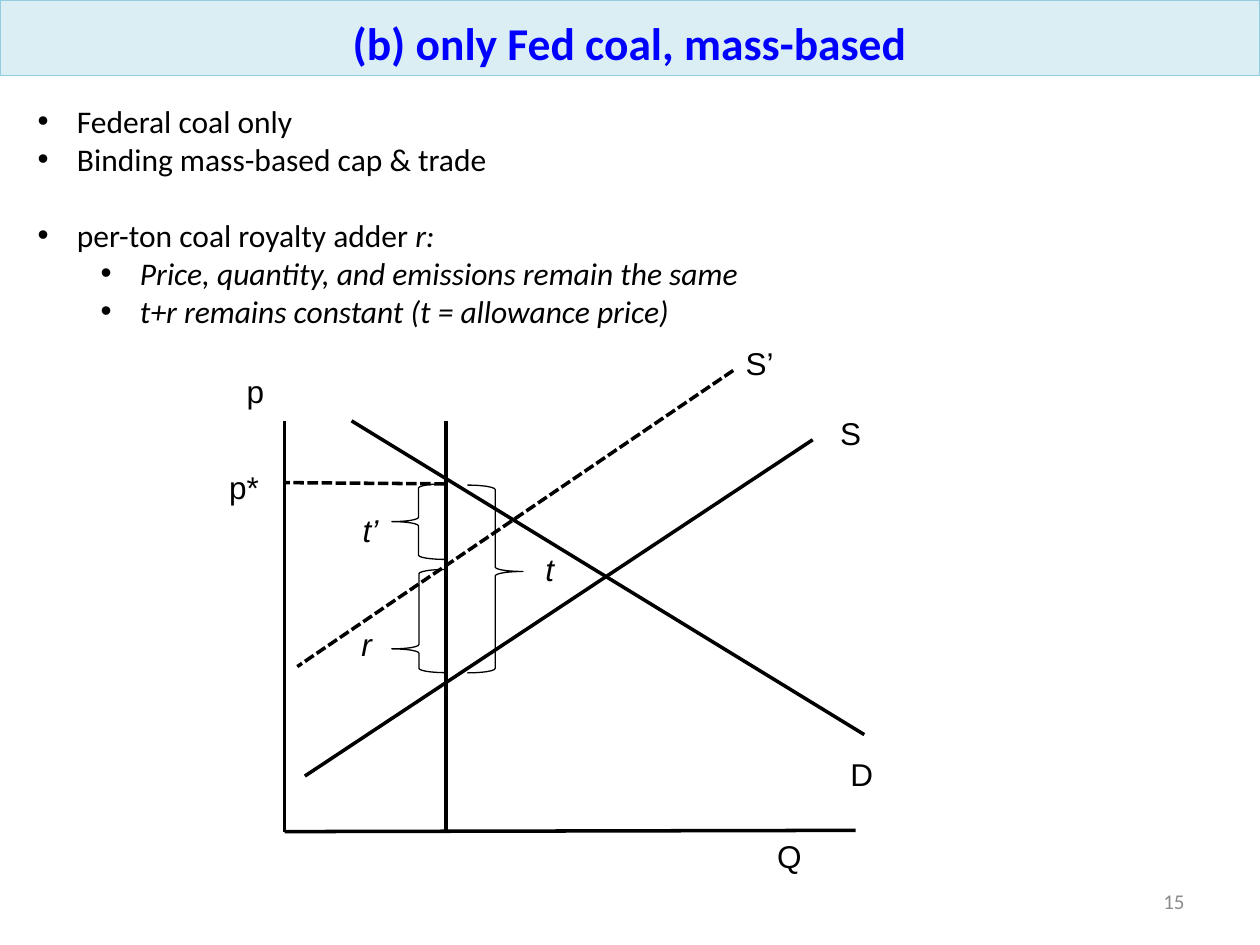
from lxml.etree import SubElement
from pptx import Presentation
from pptx.dml.color import RGBColor
from pptx.enum.dml import MSO_LINE
from pptx.enum.shapes import MSO_CONNECTOR, MSO_SHAPE
from pptx.enum.text import MSO_ANCHOR, MSO_AUTO_SIZE, PP_ALIGN
from pptx.oxml.ns import qn
from pptx.util import Pt

COLORS = {"band": "DBEEF4", "band_edge": "93CDDD", "title": "0000FF",
          "ink": "000000", "page_number": "8C8C8C"}
AXIS_X, CAP_X, TOP_Y, BASE_Y = 162.7, 254.9, 240.5, 475.2


def color(name):
    """Look up a palette colour."""
    return RGBColor.from_string(COLORS[name])


def style_span(span, size, font, ink="ink", bold=False, italic=False):
    """Format one run of text."""
    span.font.size = Pt(size)
    span.font.name = font
    span.font.color.rgb = color(ink)
    span.font.bold = bold
    span.font.italic = italic


def place(shape, left, top, width, height):
    """Move and size a shape."""
    shape.left, shape.top = Pt(left), Pt(top)
    shape.width, shape.height = Pt(width), Pt(height)


def set_title(page, text):
    """Turn the title placeholder into a coloured band across the top."""
    title = page.shapes.title
    place(title, 0, 0, 720, 43.2)
    title.fill.solid()
    title.fill.fore_color.rgb = color("band")
    title.line.color.rgb = color("band_edge")
    title.line.width = Pt(0)
    frame = title.text_frame
    frame.text = text
    frame.auto_size = MSO_AUTO_SIZE.NONE
    frame.vertical_anchor = MSO_ANCHOR.BOTTOM
    para = frame.paragraphs[0]
    para.alignment = PP_ALIGN.CENTER
    style_span(para.runs[0], 26, "Calibri", "title", bold=True)


def add_bullets(page, bounds, items):
    """Add bulleted paragraphs from (level, space before, spans) items."""
    box = page.shapes.add_textbox(*map(Pt, bounds))
    frame = box.text_frame
    frame.word_wrap = True
    for index, (level, gap, spans) in enumerate(items):
        para = frame.add_paragraph() if index else frame.paragraphs[0]
        para.level = level
        para.space_before = Pt(gap)
        properties = para._p.get_or_add_pPr()
        properties.set("marL", str(Pt(22.5 + 36 * level)))
        properties.set("indent", str(Pt(-22.5)))
        SubElement(properties, qn("a:buFont"), typeface="Arial")
        SubElement(properties, qn("a:buChar"), char="•")
        for text, italic in spans:
            span = para.add_run()
            span.text = text
            style_span(span, 18, "Calibri", italic=italic)


def add_label(page, text, left, top, width, italic=False):
    """Add a short diagram label."""
    box = page.shapes.add_textbox(Pt(left), Pt(top), Pt(width), Pt(30))
    frame = box.text_frame
    frame.word_wrap = False
    frame.text = text
    style_span(frame.paragraphs[0].runs[0], 18, "Arial", italic=italic)


def add_line(page, start, end, dashed=False):
    """Add a straight line of the diagram."""
    line = page.shapes.add_connector(
        MSO_CONNECTOR.STRAIGHT, *map(Pt, start + end))
    line.line.color.rgb = color("ink")
    line.line.width = Pt(2)
    if dashed:
        line.line.dash_style = MSO_LINE.SQUARE_DOT
    SubElement(line._element.spPr, qn("a:effectLst"))


def add_brace(page, bounds, tip=0.5, rotation=0):
    """Add a brace whose tip sits at the given share of its height."""
    brace = page.shapes.add_shape(MSO_SHAPE.LEFT_BRACE, *map(Pt, bounds))
    brace.adjustments[0] = 0.08
    brace.adjustments[1] = tip
    brace.rotation = rotation
    brace.shadow.inherit = False
    brace.fill.background()
    brace.line.color.rgb = color("ink")
    brace.line.width = Pt(0.75)


def add_page_number(page, number):
    """Add the page number at the lower right."""
    box = page.shapes.add_textbox(Pt(516), Pt(500.5), Pt(168), Pt(28.8))
    frame = box.text_frame
    frame.word_wrap = True
    frame.vertical_anchor = MSO_ANCHOR.MIDDLE
    frame.text = number
    para = frame.paragraphs[0]
    para.alignment = PP_ALIGN.RIGHT
    style_span(para.runs[0], 12, "Calibri", "page_number")


def add_diagram(page):
    """Draw the supply and demand diagram."""
    add_line(page, (493.9, 419.8), (200.9, TOP_Y))
    add_line(page, (AXIS_X, TOP_Y), (AXIS_X, BASE_Y))
    add_line(page, (488.9, 474.5), (AXIS_X, BASE_Y))
    add_line(page, (464.4, 251.3), (174.2, 443.5))
    add_line(page, (CAP_X, TOP_Y), (CAP_X, BASE_Y))
    add_line(page, (419, 211.7), (169.9, 380.9), dashed=True)
    add_line(page, (254.2, 276.5), (AXIS_X, 275.8), dashed=True)
    add_brace(page, (223.9, 276.5, 30.5, 43.2))
    add_brace(page, (223.9, 325.4, 31, 59), tip=0.77)
    add_brace(page, (267.1, 277.2, 31.7, 107.3), tip=0.54, rotation=180)
    for text, left, top, width in (
            ("Q", 437, 474.5, 32.4), ("S", 473, 233.3, 29.5),
            ("D", 478.8, 427.7, 31), ("S’", 419, 193, 34.6),
            ("p", 133.9, 208.8, 27.4), ("p*", 123.8, 264.2, 35.3)):
        add_label(page, text, left, top, width)
    for text, left, top, width in (
            ("t’", 200.2, 288.7, 23.8), ("r", 199.4, 353.5, 23),
            ("t", 304.6, 311, 19.4)):
        add_label(page, text, left, top, width, italic=True)


def main():
    """Build the slide and save it."""
    deck = Presentation()
    deck.slide_width, deck.slide_height = Pt(720), Pt(540)
    page = deck.slides.add_slide(deck.slide_layouts[5])
    set_title(page, "(b) only Fed coal, mass-based")
    add_bullets(page, (14.4, 54.7, 572.4, 138.2), [
        (0, 0, [("Federal coal only", False)]),
        (0, 0, [("Binding mass-based cap & trade", False)]),
        (0, 22, [("per-ton coal royalty adder ", False), ("r:", True)]),
        (1, 0, [("Price, quantity, and emissions remain the same", True)]),
        (1, 0, [("t+r remains constant (t = allowance price)", True)]),
    ])
    add_diagram(page)
    add_page_number(page, "15")
    deck.save("out.pptx")


if __name__ == "__main__":
    main()
